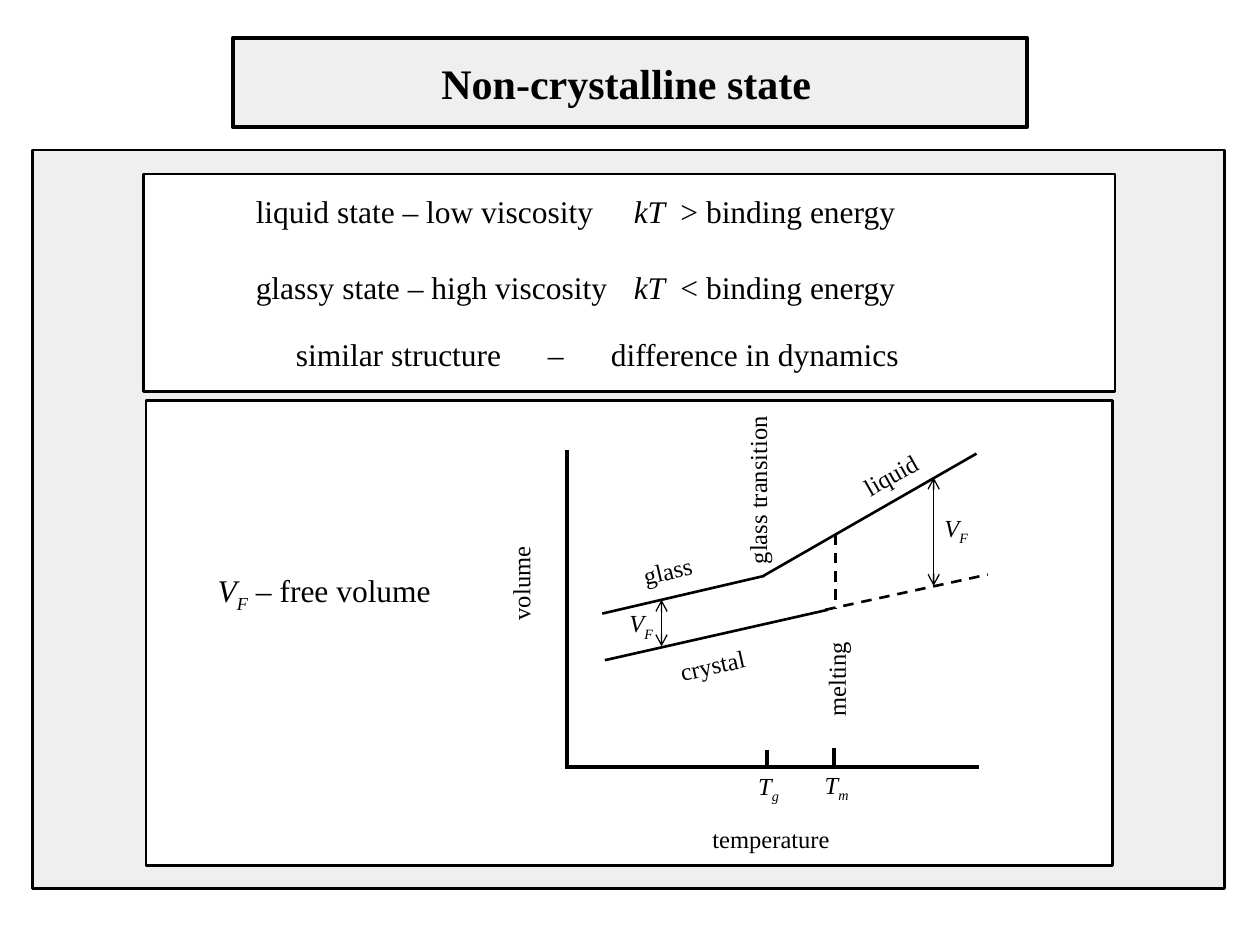
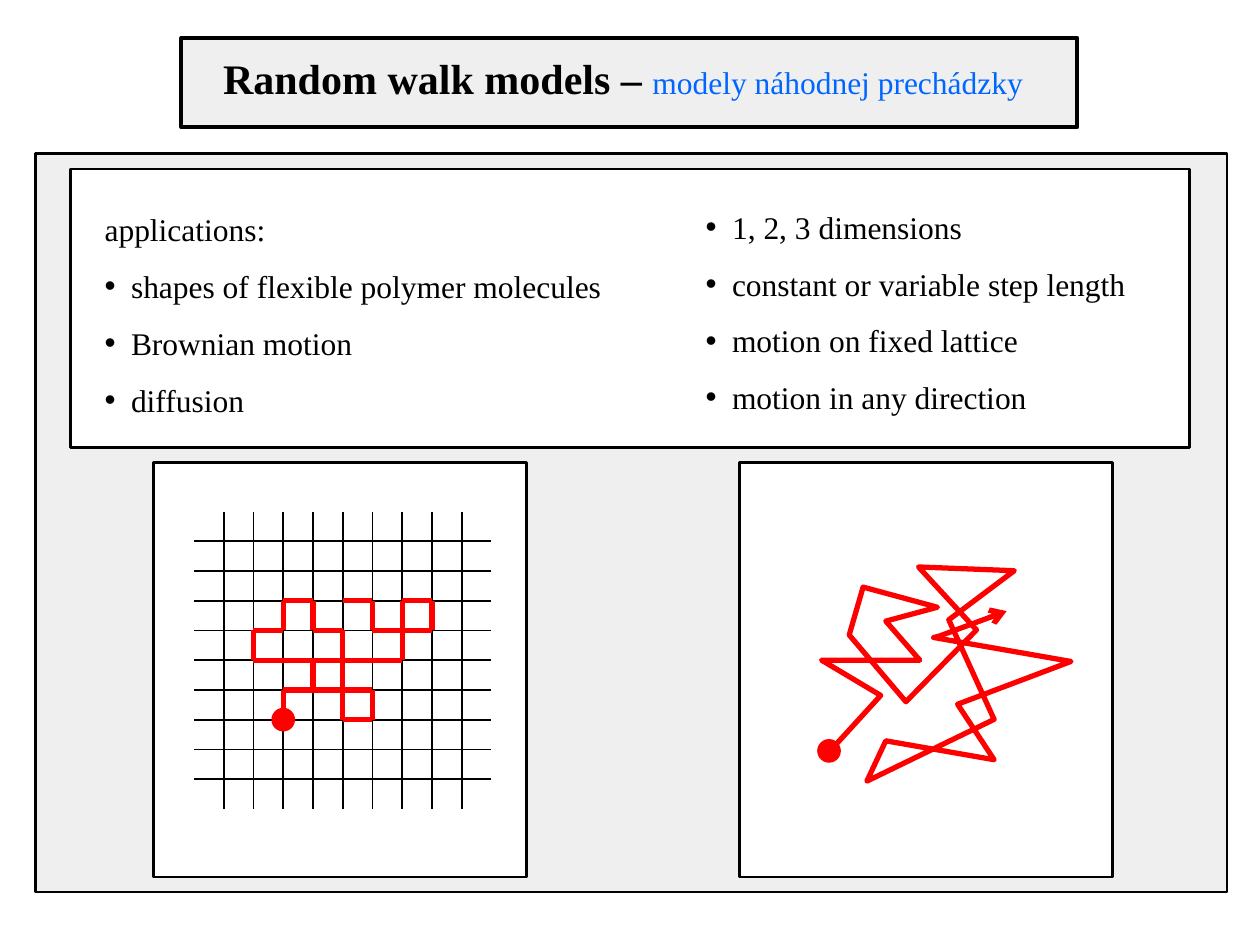
from lxml import etree
from pptx import Presentation
from pptx import util as u
from pptx.dml.color import RGBColor
from pptx.enum import dml, shapes, text
from pptx.oxml import ns

PX = 9144  # EMU in one px, 100 px to the inch
FONT = "Times New Roman"
HUE = {"ink": "000000", "paper": "FFFFFF", "grey": "EFEFEF",
       "red": "FF0000", "blue": "0066FF"}
ITAL = {"italic": True}
SUB = {"italic": True, "base": -25000}


def emu(*vals):
    return [u.Emu(round(v * PX)) for v in vals]


def rgb(name):
    return RGBColor.from_string(HUE[name])


def node(parent, tag, **attrs):
    return etree.SubElement(parent, ns.qn(tag), attrs)


# Shapes and lines
def paint(shape, fill, line, width):
    shape.shadow.inherit = False
    if fill:
        shape.fill.solid()
        shape.fill.fore_color.rgb = rgb(fill)
    else:
        shape.fill.background()
    shape.line.color.rgb = rgb(line)
    shape.line.width = u.Pt(width)


def panel(slide, box, fill="paper", width=1.5):
    rect = slide.shapes.add_shape(shapes.MSO_SHAPE.RECTANGLE, *emu(*box))
    paint(rect, fill, "ink", width)


def dot(slide, x, y, r=8):
    disc = slide.shapes.add_shape(shapes.MSO_SHAPE.OVAL, *emu(x - r, y - r, 2 * r, 2 * r))
    paint(disc, "red", "red", 2)


def line(slide, x1, y1, x2, y2, color="ink", width=1.5, dash=False, ends=()):
    rule = slide.shapes.add_connector(shapes.MSO_CONNECTOR.STRAIGHT, *emu(x1, y1, x2, y2))
    rule.line.color.rgb = rgb(color)
    rule.line.width = u.Pt(width)
    if dash:
        rule.line.dash_style = dml.MSO_LINE.DASH
    for end in ends:
        node(rule.line._get_or_add_ln(), end, type="arrow")
    node(rule._element.spPr, "a:effectLst")


# Text: each paragraph is a list of runs, a run is a string or (string, format)
def write(shape, paras, size=18, align="LEFT", wrap=True, lead=1.0, gap=0,
          tabs=(), dots=0, first=0):
    frame = shape.text_frame
    frame.word_wrap = wrap
    frame.auto_size = text.MSO_AUTO_SIZE.NONE
    frame.vertical_anchor = text.MSO_ANCHOR.TOP
    for i, runs in enumerate(paras):
        para = frame.paragraphs[0] if i == 0 else frame.add_paragraph()
        para.alignment = getattr(text.PP_ALIGN, align)
        para.line_spacing = lead
        para.space_before = u.Pt(gap if i else 0)
        props = para._p.get_or_add_pPr()
        mark = dots and i >= first
        hang = emu(dots if mark else 0)[0]
        props.set("marL", str(hang))
        props.set("indent", str(-hang))
        if mark:
            node(props, "a:buChar", char="•")
        else:
            node(props, "a:buNone")
        if tabs:
            stops = node(props, "a:tabLst")
            for stop in emu(*tabs):
                node(stops, "a:tab", pos=str(stop), algn="l")
        for part in runs:
            words, fmt = (part, {}) if isinstance(part, str) else part
            run = para.add_run()
            run.text = words
            run.font.name = FONT
            run.font.size = u.Pt(fmt.get("size", size))
            run.font.bold = fmt.get("bold", False)
            run.font.italic = fmt.get("italic", False)
            run.font.color.rgb = rgb(fmt.get("color", "ink"))
            if "base" in fmt:
                run._r.get_or_add_rPr().set("baseline", str(fmt["base"]))


def label(slide, box, runs, turn=0, **fmt):
    note = slide.shapes.add_textbox(*emu(*box))
    note.rotation = turn
    write(note, [runs], **fmt)


def fill_in(slide, holder, box, paras, **fmt):
    """Moves a placeholder to the box, in front of the panels, and fills it."""
    holder.left, holder.top, holder.width, holder.height = emu(*box)
    slide.shapes._spTree.append(holder._element)
    write(holder, paras, **fmt)


# Shared frame: title band, grey field, title
def start(deck, layout, band, field, head, runs, align):
    slide = deck.slides.add_slide(deck.slide_layouts[layout])
    panel(slide, band, "grey", 2.25)
    panel(slide, field, "grey")
    fill_in(slide, slide.shapes.title, head, [runs], size=24, align=align)
    return slide


# Slide 1: statements on the two states
def states(slide, box):
    x, y, w, h = box
    panel(slide, box)
    rows = [[f"{name} viscosity\t", ("kT ", ITAL), f" {sign} binding energy"]
            for name, sign in (("liquid state – low", ">"), ("glassy state – high", "<"))]
    fill_in(slide, slide.placeholders[1], (x + 79, y + 9, 648, 101), rows,
            gap=22, tabs=[400])
    label(slide, (x + 111, y + 123, 600, 40),
          ["similar structure\t–\tdifference in dynamics"], tabs=[219, 300])


# Slide 1: volume against temperature
def plot(slide, box):
    x, y, w, h = box
    panel(slide, box)

    def rule(x1, y1, x2, y2, **fmt):
        line(slide, x + x1, y + y1, x + x2, y + y2, **fmt)

    def tag(lx, ly, lw, runs, turn=0):
        label(slide, (x + lx, y + ly, lw, 34), runs, turn, size=14,
              align="CENTER", wrap=False)

    # Axes and ticks
    for ends in ((335, 291, 661, 291), (334, 292, 334, 39),
                 (546, 276, 546, 291), (493, 277, 493, 292)):
        rule(*ends, width=2.25)
    # Crystal, glass and liquid curves
    for ends in ((364, 206, 541, 166), (362, 169, 491, 139), (490, 139, 659, 42)):
        rule(*ends)
    for ends in ((539, 166, 668, 138), (547, 106, 547, 165)):
        rule(*ends, dash=True)
    # Free volume arrows
    for ax, top, low in ((409, 158, 195), (625, 61, 147)):
        rule(ax, top, ax, low, width=0.75, ends=("a:headEnd", "a:tailEnd"))
    # Names
    for lx, ly, lw, name, turn in (
            (439, 331, 114, "temperature", 0), (258, 128, 79, "volume", 270),
            (413, 193, 73, "crystal", 347.4), (384, 118, 60, "glass", 346.7),
            (558, 42, 66, "liquid", 330.3), (416, 54, 139, "glass transition", 270),
            (508, 204, 80, "melting", 270)):
        tag(lx, ly, lw, [name], turn)
    # Symbols
    for lx, ly, main, low in ((474, 289, "T", "g"), (528, 288, "T", "m"),
                              (373, 160, "V", "F"), (623, 84, "V", "F")):
        tag(lx, ly, 40, [(main, ITAL), (low, SUB)])
    label(slide, (x + 47, y + 130, 210, 40), [("V", ITAL), ("F", SUB), " – free volume"])


# Slide 2: two lists
def lists(slide, box):
    x, y, w, h = box
    panel(slide, box)
    left = ["applications:", "shapes of flexible polymer molecules",
            "Brownian motion", "diffusion"]
    right = ["1, 2, 3 dimensions", "constant or variable step length",
             "motion on fixed lattice", "motion in any direction"]
    for spot, dx, dy, width, items, first in ((1, 17, 13, 450, left, 1),
                                              (2, 494, 11, 380, right, 0)):
        fill_in(slide, slide.placeholders[spot], (x + dx, y + dy, width, 192),
                [[item] for item in items], lead=1.5, dots=21, first=first)


# Slide 2: walk on a lattice
def lattice(slide, box):
    x, y, w, h = box
    panel(slide, box)
    side, cells = 236, 10
    gx, gy = x + 32, y + 39
    step = side / cells
    for i in range(1, cells):
        line(slide, gx + i * step, gy, gx + i * step, gy + side, width=1)
    for i in range(1, cells):
        line(slide, gx, gy + i * step, gx + side, gy + i * step, width=1)
    moves = {"U": (0, -1), "D": (0, 1), "L": (-1, 0), "R": (1, 0)}
    col, row = 3, 7
    dot(slide, gx + col * step, gy + row * step)
    for move in "URULLURURDRDDDRULLURRRUURDLLUL":
        dc, dr = moves[move]
        line(slide, gx + col * step, gy + row * step,
             gx + (col + dc) * step, gy + (row + dr) * step, color="red", width=3)
        col, row = col + dc, row + dr


# Slide 2: walk in any direction
def free_walk(slide, box):
    x, y, w, h = box
    panel(slide, box)
    dot(slide, x + 71, y + 229)
    track = [(70, 231), (112, 185), (65, 157), (143, 157), (116, 126), (157, 115),
             (98, 99), (87, 137), (132, 190), (188, 133), (142, 83), (218, 86),
             (166, 125), (202, 204), (101, 253), (116, 221), (202, 236),
             (173, 192), (263, 158), (154, 139), (158, 138)]
    pts = [(x + px, y + py) for px, py in track]
    path = slide.shapes.build_freeform(*pts[0], scale=PX)
    path.add_line_segments(pts[1:], close=False)
    paint(path.convert_to_shape(), None, "red", 3)
    line(slide, *pts[-1], x + 212, y + 118, color="red", width=3, ends=["a:tailEnd"])


def main():
    deck = Presentation()
    deck.slide_width, deck.slide_height = emu(1000, 750)

    one = start(deck, 1, (185, 30, 630, 71), (26, 119, 946, 586), (297, 41, 400, 50),
                [("Non-crystalline state", {"bold": True})], "CENTER")
    states(one, (114, 138, 771, 173))
    plot(one, (116, 318, 767, 369))

    two = start(deck, 3, (144, 30, 711, 71), (28, 122, 946, 586), (167, 37, 680, 50),
                [("Random walk models – ", {"bold": True}),
                 ("modely náhodnej prechádzky", {"size": 18, "color": "blue"})], "LEFT")
    lists(two, (56, 134, 888, 221))
    lattice(two, (122, 367, 296, 329))
    free_walk(two, (587, 367, 296, 329))

    deck.save("out.pptx")


if __name__ == "__main__":
    main()
